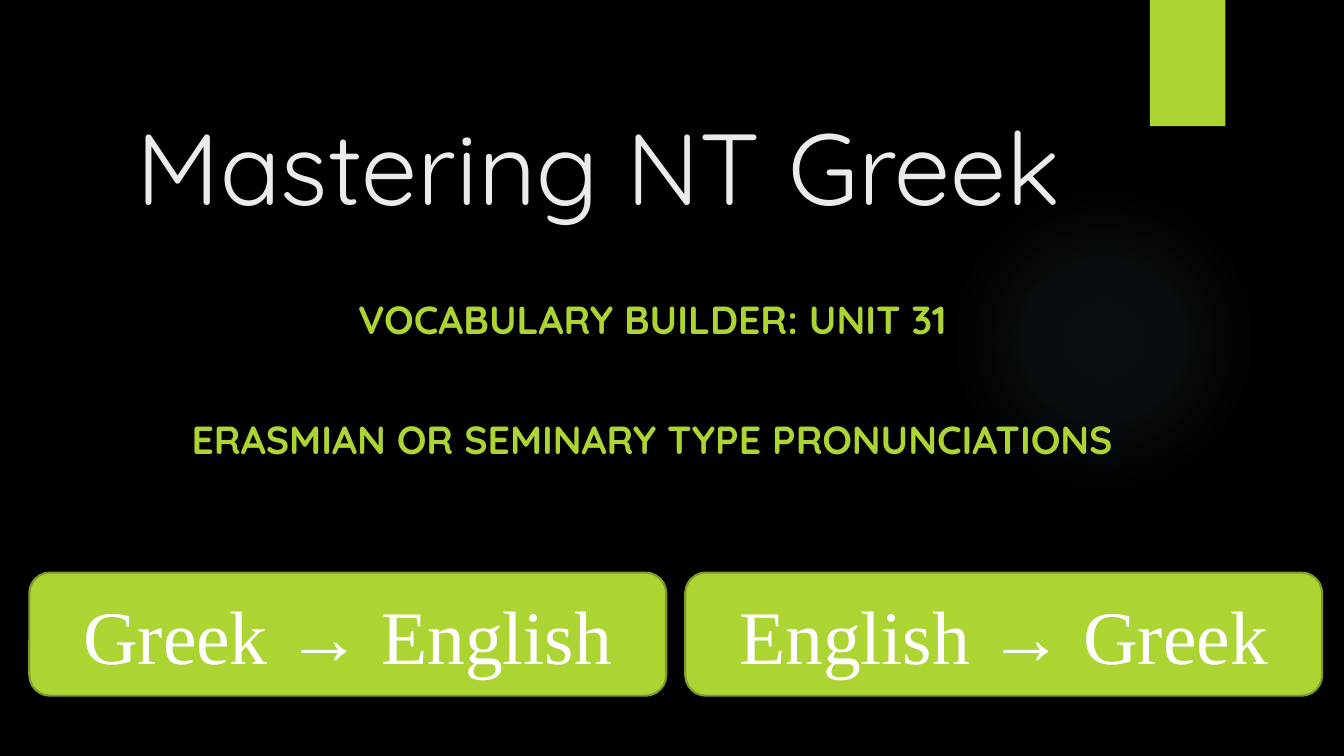
from dataclasses import dataclass

from lxml.etree import SubElement
from pptx import Presentation
from pptx.dml.color import RGBColor
from pptx.enum.shapes import MSO_SHAPE
from pptx.enum.text import MSO_ANCHOR, PP_ALIGN
from pptx.oxml.ns import qn
from pptx.util import Cm, Pt


@dataclass(frozen=True)
class Theme:
    black: RGBColor = RGBColor.from_string("000000")
    lime: RGBColor = RGBColor.from_string("ACD433")
    olive: RGBColor = RGBColor.from_string("7F9D26")
    pale: RGBColor = RGBColor.from_string("EBEBEB")
    white: RGBColor = RGBColor.from_string("FFFFFF")
    glow: str = "7AC4F0"
    sans: str = "Quicksand"
    serif: str = "Times New Roman"
    title_size: Pt = Pt(72)
    subtitle_size: Pt = Pt(28)
    button_size: Pt = Pt(54)


theme = Theme()


def add_span(para, text, font_name, size, color, bold=False):
    span = para.add_run()
    span.text = text
    span.font.name = font_name
    span.font.size = size
    span.font.bold = bold
    span.font.color.rgb = color


def add_plain_shape(kind, left, top, width, height):
    """Add a lime shape with neither shadow nor outline."""
    shape = page.shapes.add_shape(kind, Cm(left), Cm(top), Cm(width), Cm(height))
    shape.shadow.inherit = False
    shape.fill.solid()
    shape.fill.fore_color.rgb = theme.lime
    shape.line.fill.background()
    return shape


deck = Presentation()
deck.slide_width, deck.slide_height = Cm(33.87), Cm(19.05)
page = deck.slides.add_slide(deck.slide_layouts[6])
page.background.fill.solid()
page.background.fill.fore_color.rgb = theme.black

# Faint round glow, fading out from its centre
glow = add_plain_shape(MSO_SHAPE.OVAL, 23.9, 4.65, 7.82, 7.82)
glow.fill.gradient()
gradient = glow.fill._xPr.find(qn("a:gradFill"))
for child in list(gradient):
    gradient.remove(child)
stops = SubElement(gradient, qn("a:gsLst"))
for position, opacity in ((0, 7), (36, 6), (69, 0)):
    stop = SubElement(stops, qn("a:gs"), pos=str(position * 1000))
    color = SubElement(stop, qn("a:srgbClr"), val=theme.glow)
    SubElement(color, qn("a:alpha"), val=str(opacity * 1000))
circle = SubElement(gradient, qn("a:path"), path="circle")
SubElement(circle, qn("a:fillToRect"), l="50000", t="50000", r="50000", b="50000")

add_plain_shape(MSO_SHAPE.RECTANGLE, 28.98, 0, 1.9, 3.18)

# Title and subtitle
title_box = page.shapes.add_textbox(Cm(3.2), Cm(1.78), Cm(25.5), Cm(4.04))
title_box.text_frame.word_wrap = True
title_box.text_frame.vertical_anchor = MSO_ANCHOR.BOTTOM
add_span(title_box.text_frame.paragraphs[0], "Mastering NT Greek",
         theme.sans, theme.title_size, theme.pale)

subtitle_box = page.shapes.add_textbox(Cm(1.98), Cm(7.32), Cm(28.91), Cm(6.83))
subtitle_box.text_frame.word_wrap = True
unit_para = subtitle_box.text_frame.paragraphs[0]
pronunciation_para = subtitle_box.text_frame.add_paragraph()
pronunciation_para.space_before = Pt(52)
for para, text in (
    (unit_para, "VOCABULARY BUILDER: UNIT 31"),
    (pronunciation_para, "ERASMIAN OR SEMINARY TYPE PRONUNCIATIONS"),
):
    para.alignment = PP_ALIGN.CENTER
    add_span(para, text, theme.sans, theme.subtitle_size, theme.lime, bold=True)

# Direction buttons
button_left, button_pitch = 0.74, 16.53
for index, label in enumerate(("Greek → English", "English → Greek")):
    button = add_plain_shape(MSO_SHAPE.ROUNDED_RECTANGLE,
                             button_left + index * button_pitch, 14.43, 16.05, 3.1)
    button.line.color.rgb = theme.olive
    button.line.width = Pt(1.5)
    button.text_frame.word_wrap = True
    button.text_frame.vertical_anchor = MSO_ANCHOR.MIDDLE
    para = button.text_frame.paragraphs[0]
    para.alignment = PP_ALIGN.CENTER
    add_span(para, label, theme.serif, theme.button_size, theme.white)

deck.save("out.pptx")
